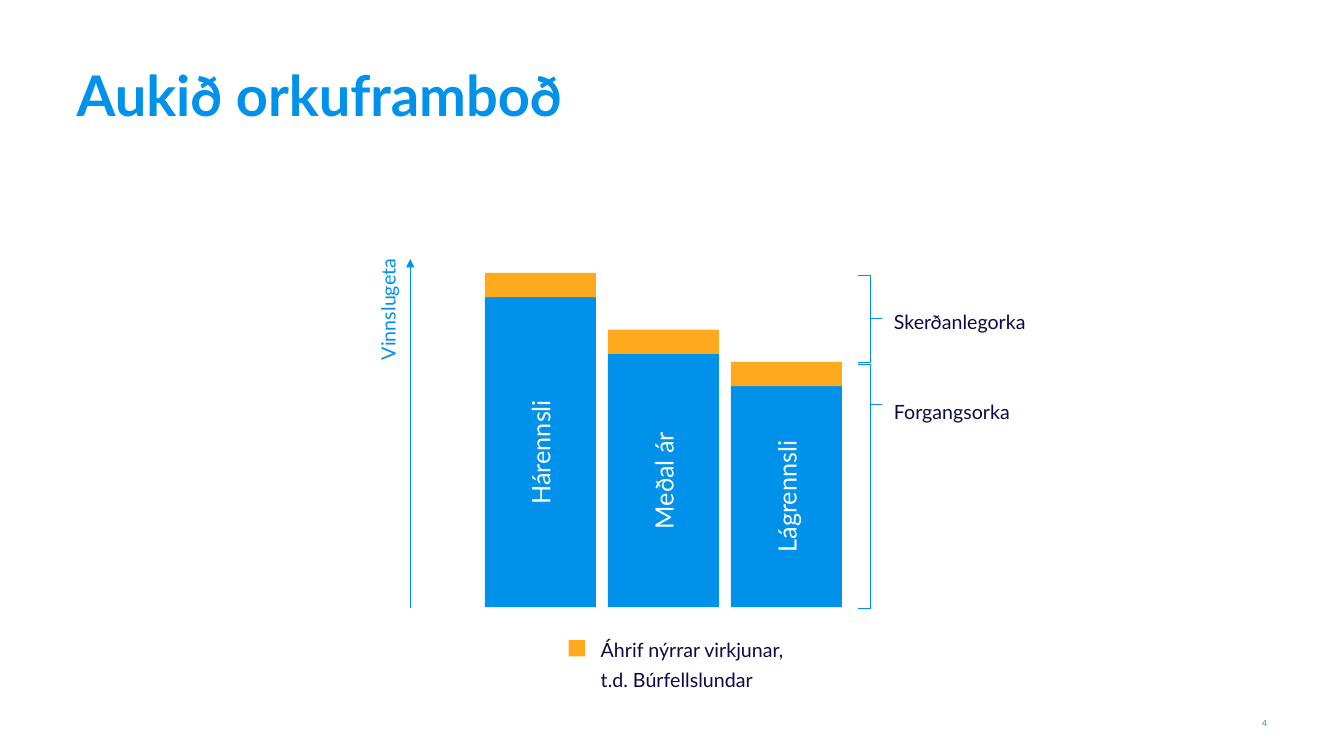
from dataclasses import dataclass

from lxml import etree
from pptx import Presentation
from pptx import util as u
from pptx.dml.color import RGBColor
from pptx.enum import shapes, text
from pptx.oxml.ns import qn

COLORS = {"blue": "0091EB", "orange": "FFAA1E", "navy": "0A0A46", "white": "FFFFFF"}
FONT = "Lato"
BAR_LEFT, BAR_WIDTH, BAR_PITCH = 12.22, 2.8, 3.1
BAR_BOTTOM, CAP_HEIGHT = 15.3, 0.61


@dataclass
class Bar:
    label: str
    top: float


@dataclass
class Bracket:
    label: str
    top: float
    height: float
    point: float
    label_top: float


BARS = [Bar("Hárennsli", 7.49), Bar("Meðal ár", 8.92), Bar("Lágrennsli", 9.73)]
BRACKETS = [
    Bracket("Skerðanlegorka", 6.93, 2.21, 0.5, 7.65),
    Bracket("Forgangsorka", 9.17, 6.15, 0.164, 9.93),
]


def rgb(name: str) -> RGBColor:
    return RGBColor.from_string(COLORS[name])


def cm_box(*lengths: float) -> list[u.Length]:
    return [u.Cm(n) for n in lengths]


def write(sp, words: str, *, size: float, color: str, bold: bool = False,
          align=text.PP_ALIGN.LEFT, anchor=text.MSO_ANCHOR.TOP,
          spacing: float = 1.0, inset: float = 0) -> None:
    tf = sp.text_frame
    tf.word_wrap = True
    tf.auto_size = text.MSO_AUTO_SIZE.NONE
    tf.vertical_anchor = anchor
    tf.margin_left = tf.margin_right = tf.margin_top = tf.margin_bottom = u.Cm(inset)
    p = tf.paragraphs[0]
    p.text = words
    p.alignment, p.line_spacing = align, spacing
    for r in p.runs:
        r.font.name, r.font.size, r.font.bold = FONT, u.Pt(size), bold
        r.font.color.rgb = rgb(color)


def add_label(s, words: str, box: tuple, *, rotation: float = 0, **fmt):
    sp = s.shapes.add_textbox(*cm_box(*box))
    sp.rotation = rotation
    write(sp, words, **fmt)
    return sp


def add_block(s, box: tuple, color: str):
    sp = s.shapes.add_shape(shapes.MSO_SHAPE.RECTANGLE, *cm_box(*box))
    sp.shadow.inherit = False
    sp.fill.solid()
    sp.fill.fore_color.rgb = rgb(color)
    sp.line.fill.background()
    return sp


def add_bar(s, bar: Bar, left: float) -> None:
    """Draw a labelled bar with the added capacity on top of it."""
    sp = add_block(s, (left, bar.top, BAR_WIDTH, BAR_BOTTOM - bar.top), "blue")
    write(sp, bar.label, size=18, color="white", align=text.PP_ALIGN.CENTER,
          anchor=text.MSO_ANCHOR.MIDDLE, inset=0.2)
    sp.text_frame._bodyPr.set("vert", "vert270")
    add_block(s, (left, bar.top - CAP_HEIGHT, BAR_WIDTH, CAP_HEIGHT), "orange")


def add_bracket(s, bracket: Bracket) -> None:
    sp = s.shapes.add_shape(shapes.MSO_SHAPE.RIGHT_BRACE,
                            *cm_box(21.62, bracket.top, 0.61, bracket.height))
    sp.shadow.inherit = False
    sp.fill.background()
    sp.line.color.rgb, sp.line.width = rgb("blue"), u.Pt(0.5)
    sp.adjustments[0], sp.adjustments[1] = 0, bracket.point
    add_label(s, bracket.label, (22.53, bracket.label_top, 4.19, 0.79),
              size=14, color="navy", spacing=1.25)


def add_axis(s, x: float, bottom: float, top: float) -> None:
    axis = s.shapes.add_connector(shapes.MSO_CONNECTOR.STRAIGHT,
                                  *cm_box(x, bottom, x, top))
    axis.line.color.rgb, axis.line.width = rgb("blue"), u.Pt(0.5)
    ln = axis.line._get_or_add_ln()
    etree.SubElement(ln, qn("a:tailEnd"), type="triangle")
    etree.SubElement(axis._element.spPr, qn("a:effectLst"))


def main() -> None:
    prs = Presentation()
    prs.slide_width, prs.slide_height = u.Cm(33.87), u.Cm(19.05)
    s = prs.slides.add_slide(prs.slide_layouts[5])

    title = s.shapes.title
    title.left, title.top, title.width, title.height = cm_box(1.93, 1.52, 27.61, 3.4)
    write(title, "Aukið orkuframboð", size=40, color="blue", bold=True)

    add_axis(s, 10.34, 15.32, 6.53)
    add_label(s, "Vinnslugeta", (7.82, 8.03, 3.81, 0.79), rotation=270, size=14,
              color="blue", align=text.PP_ALIGN.RIGHT, spacing=1.25)
    for i, bar in enumerate(BARS):
        add_bar(s, bar, BAR_LEFT + i * BAR_PITCH)
    for bracket in BRACKETS:
        add_bracket(s, bracket)

    add_block(s, (14.33, 16.13, 0.41, 0.41), "orange")
    add_label(s, "Áhrif nýrrar virkjunar,\vt.d. Búrfellslundar", (15.14, 15.93, 8.61, 1.19),
              size=14, color="navy", spacing=1.25)
    add_label(s, "4", (31.14, 17.93, 0.79, 0.41), size=6, color="blue",
              align=text.PP_ALIGN.RIGHT, anchor=text.MSO_ANCHOR.BOTTOM)
    prs.save("out.pptx")


if __name__ == "__main__":
    main()
